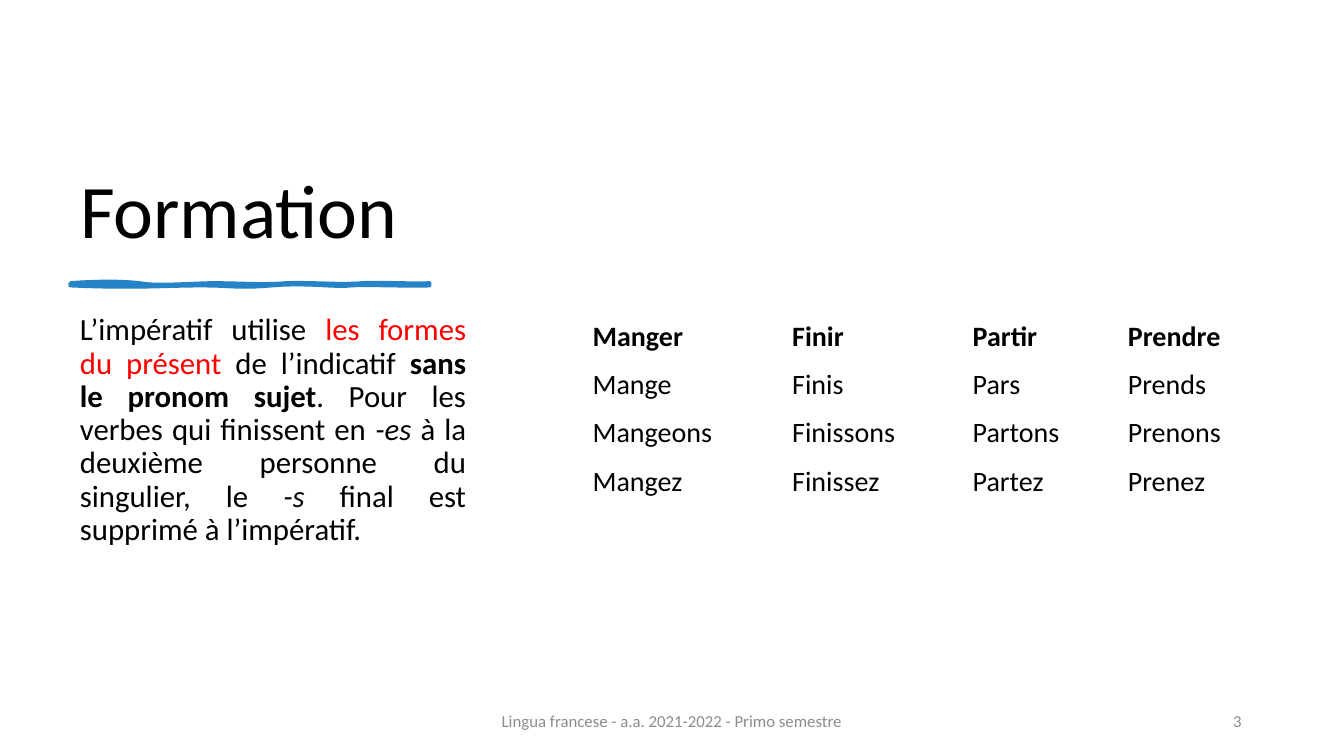
from lxml import etree
from pptx import Presentation
from pptx.dml.color import RGBColor
from pptx.enum.text import MSO_ANCHOR, MSO_AUTO_SIZE, PP_ALIGN
from pptx.oxml.ns import qn
from pptx.util import Pt

LEFT, CENTER, RIGHT, JUSTIFY = PP_ALIGN.LEFT, PP_ALIGN.CENTER, PP_ALIGN.RIGHT, PP_ALIGN.JUSTIFY
TOP, MIDDLE, BOTTOM = MSO_ANCHOR.TOP, MSO_ANCHOR.MIDDLE, MSO_ANCHOR.BOTTOM
NO_FIT = MSO_AUTO_SIZE.NONE

FONT = "Calibri"
COLORS = {"text": "000000", "accent": "FF0000", "stroke": "2683C6",
          "footer": "8C8C8C", "cell": "FFFFFF"}

RULE = [
    ("L’impératif utilise ", {}),
    ("les formes du présent", {"color": "accent"}),
    (" de l’indicatif ", {}),
    ("sans le pronom sujet", {"bold": True}),
    (". Pour les verbes qui finissent en ", {}),
    ("-es ", {"italic": True}),
    ("à la deuxième personne du singulier, le ", {}),
    ("-s ", {"italic": True}),
    ("final est supprimé à l’impératif.", {}),
]

VERBS = [
    ["Manger", "Finir", "Partir", "Prendre"],
    ["Mange", "Finis", "Pars", "Prends"],
    ["Mangeons", "Finissons", "Partons", "Prenons"],
    ["Mangez", "Finissez", "Partez", "Prenez"],
]
COLUMN_WIDTHS = [142.6, 128.9, 110.9, 120.2]
ROW_HEIGHT = 34.4

# Brush stroke: start, then cubic curves (two controls and an end), in points
STROKE_START = (50.4, 202.3)
STROKE_CURVES = [
    ((69.8, 200.9), (87.1, 200.9), (99.4, 202.3)),
    ((111.6, 204.5), (127.4, 203), (150.5, 202.3)),
    ((173.5, 202.3), (187.2, 203.8), (204.5, 202.3)),
    ((221.8, 201.6), (244.1, 203.8), (258.5, 202.3)),
    ((272.9, 201.6), (296.6, 203), (306.7, 202.3)),
    ((306.7, 203), (306.7, 203.8), (306.7, 203.8)),
    ((293.8, 204.5), (262.1, 203), (250.6, 203.8)),
    ((239, 205.2), (218.9, 201.6), (194.4, 203.8)),
    ((169.2, 205.9), (166.3, 203.8), (143.3, 203.8)),
    ((119.5, 203.8), (95, 205.9), (50.4, 203.8)),
    ((50.4, 203.8), (50.4, 203), (50.4, 202.3)),
]
CURVE_STEPS = 10


def rgb(name):
    return RGBColor.from_string(COLORS[name])


def add_run(p, text, size, color="text", **style):
    r = p.add_run()
    r.text = text
    for name, value in {"name": FONT, "size": Pt(size), **style}.items():
        setattr(r.font, name, value)
    r.font.color.rgb = rgb(color)


def write_text(sp, box, runs, size, anchor=TOP, **paragraph):
    """Place a shape and fill it with one paragraph of styled runs."""
    sp.left, sp.top, sp.width, sp.height = (Pt(v) for v in box)
    tf = sp.text_frame
    for name, value in {"word_wrap": True, "auto_size": NO_FIT,
                        "vertical_anchor": anchor}.items():
        setattr(tf, name, value)
    p = tf.paragraphs[0]
    for name, value in paragraph.items():
        setattr(p, name, value)
    for text, style in runs:
        add_run(p, text, size, **style)


def add_text(s, box, runs, size, **layout):
    sp = s.shapes.add_textbox(*(Pt(v) for v in box))
    write_text(sp, box, runs, size, **layout)


def curve_point(points, t):
    weights = ((1 - t) ** 3, 3 * t * (1 - t) ** 2, 3 * t * t * (1 - t), t ** 3)
    return tuple(Pt(sum(w * pt[axis] for w, pt in zip(weights, points)))
                 for axis in (0, 1))


def add_brush_stroke(s):
    start = STROKE_START
    builder = s.shapes.build_freeform(Pt(start[0]), Pt(start[1]))
    for curve in STROKE_CURVES:
        points = (start, *curve)
        builder.add_line_segments([curve_point(points, i / CURVE_STEPS)
                                   for i in range(1, CURVE_STEPS + 1)], close=False)
        start = curve[-1]
    builder.add_line_segments([], close=True)
    sp = builder.convert_to_shape()
    sp.shadow.inherit = False
    sp.fill.solid()
    sp.fill.fore_color.rgb = sp.line.color.rgb = rgb("stroke")
    sp.line.width = Pt(3)


def set_borders(cell, header):
    tc_pr = cell._tc.get_or_add_tcPr()
    for i, side in enumerate(("lnL", "lnR", "lnT", "lnB")):
        width = 3 if header and side == "lnB" else 1
        ln = etree.Element(qn(f"a:{side}"), w=str(Pt(width)))
        fill = etree.SubElement(ln, qn("a:solidFill"))
        etree.SubElement(fill, qn("a:srgbClr"), val=COLORS["cell"])
        tc_pr.insert(i, ln)


def add_verb_table(s, left, top):
    rows, cols = len(VERBS), len(VERBS[0])
    table = s.shapes.add_table(rows, cols, Pt(left), Pt(top), Pt(sum(COLUMN_WIDTHS)),
                               Pt(rows * ROW_HEIGHT)).table
    table.horz_banding = False
    for column, width in zip(table.columns, COLUMN_WIDTHS):
        column.width = Pt(width)
    for i, forms in enumerate(VERBS):
        table.rows[i].height = Pt(ROW_HEIGHT)
        for j, form in enumerate(forms):
            cell = table.cell(i, j)
            for name, value in {"margin_left": 10, "margin_right": 10,
                                "margin_top": 5, "margin_bottom": 5}.items():
                setattr(cell, name, Pt(value))
            cell.fill.solid()
            cell.fill.fore_color.rgb = rgb("cell")
            set_borders(cell, header=i == 0)
            add_run(cell.text_frame.paragraphs[0], form, 20, bold=i == 0)


def main():
    prs = Presentation()
    prs.slide_width, prs.slide_height = Pt(960), Pt(540)
    s = prs.slides.add_slide(prs.slide_layouts[5])

    # Title and underline
    write_text(s.shapes.title, (50, 50.4, 270, 135.4), [("Formation", {})], 54,
               anchor=BOTTOM, alignment=LEFT, line_spacing=0.9)
    add_brush_stroke(s)

    # Grammar rule
    add_text(s, (50, 221, 290, 217.4), RULE, 22,
             alignment=JUSTIFY, line_spacing=0.9, space_before=Pt(10))

    # Footer and slide number
    for left, width, text, align in (
            (318, 324, "Lingua francese - a.a. 2021-2022 - Primo semestre", CENTER),
            (678, 216, "3", RIGHT)):
        add_text(s, (left, 500.5, width, 28.8), [(text, {"color": "footer"})], 12,
                 anchor=MIDDLE, alignment=align, space_after=Pt(6))

    # Imperative forms
    add_verb_table(s, 413.3, 223.2)

    prs.save("out.pptx")


if __name__ == "__main__":
    main()
